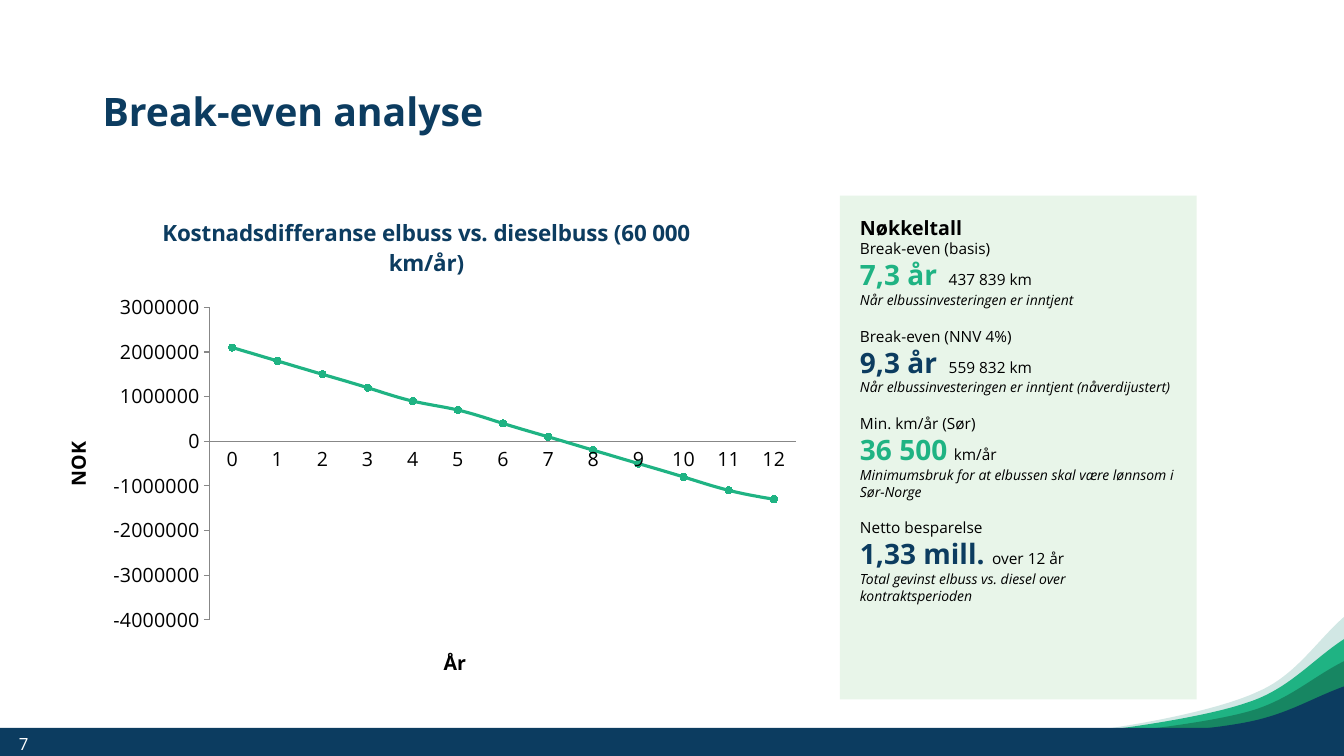
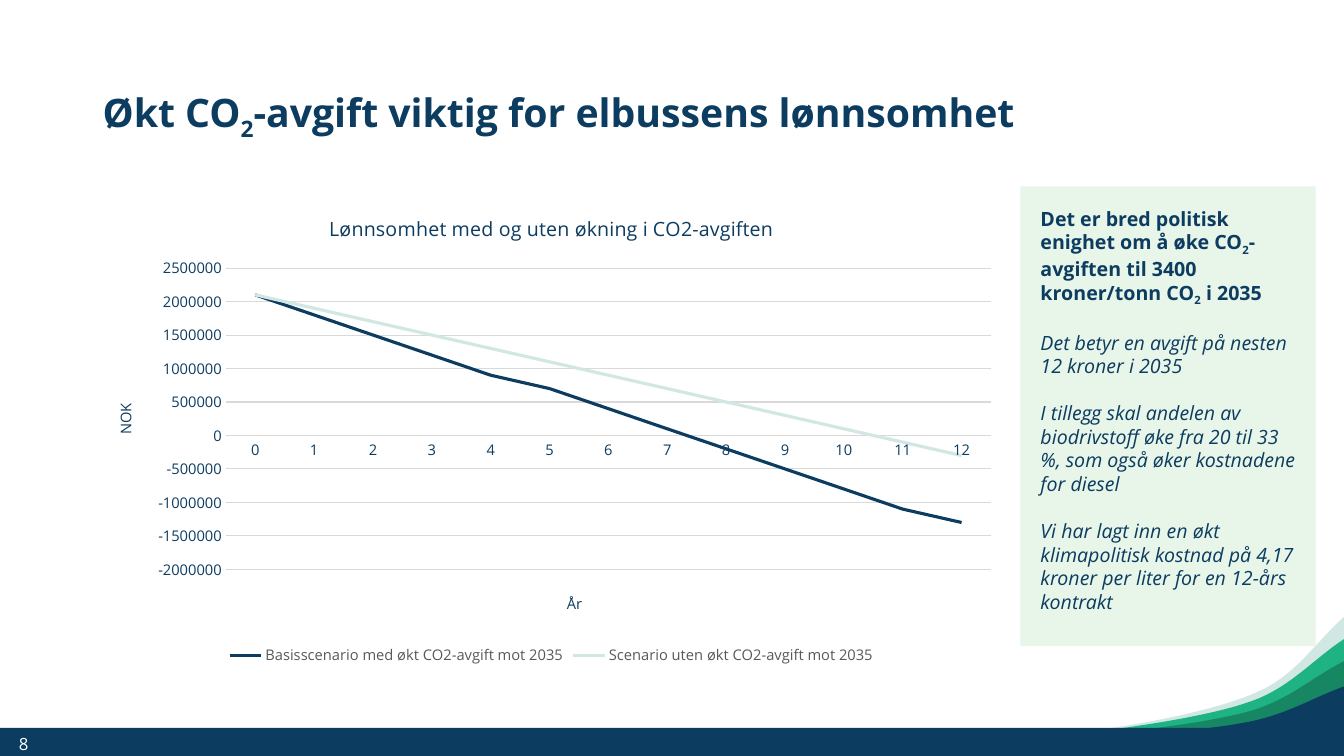
"""Build two slides on the break-even and carbon tax of electric buses."""
import lxml.etree
import pptx
import pptx.chart.data
import pptx.dml.color
import pptx.enum.chart
import pptx.enum.shapes
import pptx.enum.text
import pptx.oxml.ns
import pptx.util

Inches = pptx.util.Inches
Pt = pptx.util.Pt
RGBColor = pptx.dml.color.RGBColor
qn = pptx.oxml.ns.qn

FACE = "Open Sans"
NAVY = RGBColor(0x0C, 0x3C, 0x60)
GREEN = RGBColor(0x1F, 0xB3, 0x83)
FOREST = RGBColor(0x17, 0x86, 0x62)
PALE = RGBColor(0xD1, 0xE7, 0xE4)
MINT = RGBColor(0xE8, 0xF5, 0xE9)
WHITE = RGBColor(0xFF, 0xFF, 0xFF)
BLACK = RGBColor(0x00, 0x00, 0x00)
SILVER = RGBColor(0xD9, 0xD9, 0xD9)
GRAY = RGBColor(0x87, 0x87, 0x87)
SLATE = RGBColor(0x59, 0x59, 0x59)

WIDTH, HEIGHT = 13.33, 7.5
WAVES = [
    (PALE, (9.16, 7.4), [
        [(8.63, 7.37), (9.64, 7.41), (10.19, 7.31)],
        [(10.75, 7.29), (11.97, 7.1), (12.48, 6.86)],
        [(12.85, 6.7), (13.05, 6.37), (13.33, 6.12)]]),
    (GREEN, (8.61, 7.42), [
        [(8.02, 7.4), (9.16, 7.43), (9.78, 7.35)],
        [(10.42, 7.33), (11.79, 7.17), (12.37, 6.97)],
        [(12.78, 6.84), (13.01, 6.55), (13.33, 6.34)]]),
    (FOREST, (8.62, 7.42), [
        [(8.03, 7.4), (9.17, 7.42), (9.79, 7.36)],
        [(10.42, 7.35), (11.8, 7.22), (12.38, 7.06)],
        [(12.78, 6.95), (13.01, 6.72), (13.33, 6.56)]]),
    (NAVY, (8.46, 7.43), [
        [(7.85, 7.41), (9.03, 7.43), (9.67, 7.38)],
        [(10.32, 7.37), (11.75, 7.28), (12.34, 7.17)],
        [(12.77, 7.09), (13, 6.93), (13.33, 6.81)]]),
]
BASE = [2100000, 1800000, 1500000, 1200000, 900000, 700000, 400000,
        100000, -200000, -500000, -800000, -1100000, -1300000]
NO_RISE = [2100000 - 200000 * year for year in range(13)]
FACTS = [
    ("Break-even (basis)", "7,3 år", "437 839 km", 0.88, GREEN,
     "Når elbussinvesteringen er inntjent"),
    ("Break-even (NNV 4%)", "9,3 år", "559 832 km", 0.88, NAVY,
     "Når elbussinvesteringen er inntjent (nåverdijustert)"),
    ("Min. km/år (Sør)", "36 500", "km/år", 0.93, GREEN,
     "Minimumsbruk for at elbussen skal være lønnsom i Sør-Norge"),
    ("Netto besparelse", "1,33 mill.", "over 12 år", 1.31, NAVY,
     "Total gevinst elbuss vs. diesel over kontraktsperioden"),
]
NOTES = [
    "Det betyr en avgift på nesten 12 kroner i 2035",
    "I tillegg skal andelen av biodrivstoff øke fra 20 til 33 %, "
    "som også øker kostnadene for diesel",
    "Vi har lagt inn en økt klimapolitisk kostnad på 4,17 kroner "
    "per liter for en 12-års kontrakt",
]


class Deck:
    """Hold the shared style and the current slide."""

    def __init__(self):
        """Start an empty deck."""
        self.show = pptx.Presentation()
        self.show.slide_width = Inches(WIDTH)
        self.show.slide_height = Inches(HEIGHT)
        self.slide = None

    def page(self, title, number):
        """Add a slide with waves, band, title and number."""
        self.slide = self.show.slides.add_slide(self.show.slide_layouts[6])
        for color, start, parts in WAVES:
            self.wave(color, start, parts)
        self.block((0, 7.22, WIDTH, 0.28), NAVY)
        head = self.line(self.label((0.92, 0.4, 11.5, 1.45)), title, 28, NAVY, bold=True)
        head.line_spacing = 0.9
        self.line(self.label((0.09, 7.18, 0.57, 0.4)), str(number), 12, WHITE)

    def paint(self, shape, color):
        """Fill a shape with no line or shadow."""
        shape.shadow.inherit = False
        shape.fill.solid()
        shape.fill.fore_color.rgb = color
        shape.line.fill.background()

    def wave(self, color, start, parts):
        """Draw a wave of cubic curves down to its flat base."""
        knots = [start] + [part[-1] for part in parts] + [(WIDTH, start[1])]
        points = [(Inches(x), Inches(y)) for x, y in knots]
        form = self.slide.shapes.build_freeform(*points[0], scale=1.0)
        form.add_line_segments(points[1:], close=True)
        shape = form.convert_to_shape()
        self.paint(shape, color)
        for edge, part in zip(list(shape._element.iter(qn("a:lnTo"))), parts):
            bend = lxml.etree.Element(qn("a:cubicBezTo"))
            for x, y in part:
                lxml.etree.SubElement(
                    bend, qn("a:pt"), x=str(Inches(x) - shape.left),
                    y=str(Inches(y) - shape.top))
            edge.getparent().replace(edge, bend)

    def block(self, box, color):
        """Draw a filled rectangle."""
        shape = self.slide.shapes.add_shape(
            pptx.enum.shapes.MSO_SHAPE.RECTANGLE, *map(Inches, box))
        self.paint(shape, color)
        return shape

    def panel(self, box):
        """Draw a mint panel and return its text frame."""
        frame = self.block(box, MINT).text_frame
        frame.word_wrap = True
        frame.vertical_anchor = pptx.enum.text.MSO_ANCHOR.TOP
        frame.margin_left = frame.margin_right = Inches(0.2)
        frame.margin_top = frame.margin_bottom = Inches(0.2)
        return frame

    def label(self, box):
        """Add a text box and return its frame."""
        frame = self.slide.shapes.add_textbox(*map(Inches, box)).text_frame
        frame.word_wrap = True
        frame.vertical_anchor = pptx.enum.text.MSO_ANCHOR.MIDDLE
        return frame

    def style(self, font, size, color, bold=False, slant=False):
        """Set the face, size, colour and weight of a font."""
        font.name = FACE
        font.size = Pt(size)
        font.color.rgb = color
        font.bold = bold
        font.italic = slant

    def line(self, frame, text, size, color, bold=False, slant=False, gap=0, tab=None):
        """Add a paragraph, lowering each subscript two."""
        para = frame.paragraphs[0]
        if para.runs:
            para = frame.add_paragraph()
        para.alignment = pptx.enum.text.PP_ALIGN.LEFT
        if gap:
            para.space_before = Pt(gap)
        if tab:
            stops = lxml.etree.SubElement(para._p.get_or_add_pPr(), qn("a:tabLst"))
            lxml.etree.SubElement(
                stops, qn("a:tab"), pos=str(Inches(tab)), algn="l")
        self.style(para.font, size, color, bold, slant)
        for index, part in enumerate(text.split("₂")):
            if index:
                low = para.add_run()
                low.text = "2"
                low._r.get_or_add_rPr().set("baseline", "-25000")
            if part:
                para.add_run().text = part
        return para

    def fact(self, frame, name, value, unit, tab, color, note, gap):
        """Add a key figure with its name, unit and note."""
        self.line(frame, name, 11, BLACK, gap=gap)
        para = self.line(frame, value, 11, BLACK, tab=tab)
        self.style(para.runs[0].font, 20, color, bold=True)
        para.add_run().text = "\t" + unit
        self.line(frame, note, 10, BLACK, slant=True)

    def place(self, chart, box, plot):
        """Fix the plot area of a chart, both boxes in inches."""
        area = chart._chartSpace.chart.plotArea
        layout = area.find(qn("c:layout"))
        if layout is None:
            layout = lxml.etree.Element(qn("c:layout"))
            area.insert(0, layout)
        left, top, wide, high = box
        x, y, w, h = plot
        manual = lxml.etree.SubElement(layout, qn("c:manualLayout"))
        for key, value in (
                ("layoutTarget", "inner"), ("xMode", "edge"), ("yMode", "edge"),
                ("x", (x - left) / wide), ("y", (y - top) / high),
                ("w", w / wide), ("h", h / high)):
            lxml.etree.SubElement(manual, qn("c:" + key), val=str(value))

    def chart(self, kind, box, plot, series, size, color, title, big, bold, scale):
        """Add a line chart over twelve years."""
        data = pptx.chart.data.CategoryChartData()
        data.categories = [str(year) for year in range(13)]
        for name, values, _ in series:
            data.add_series(name, values)
        chart = self.slide.shapes.add_chart(kind, *map(Inches, box), data).chart
        self.style(chart.font, size, color)
        chart.has_legend = False
        chart.has_title = True
        self.head(chart.chart_title, title, big, NAVY, bold)
        chart.plots[0].vary_by_categories = False
        for item, (_, _, tint) in zip(chart.plots[0].series, series):
            item.smooth = False
            item.format.line.color.rgb = tint
            item.format.line.width = Pt(2.25)
        for axis, name in ((chart.category_axis, "År"), (chart.value_axis, "NOK")):
            self.head(axis.axis_title, name, size, color, bold)
            self.style(axis.tick_labels.font, size, color)
            axis.has_major_gridlines = False
            axis.major_tick_mark = pptx.enum.chart.XL_TICK_MARK.NONE
        axis.axis_title.text_frame._txBody.bodyPr.set("rot", "-5400000")
        axis.minimum_scale, axis.maximum_scale, axis.major_unit = scale
        axis.tick_labels.number_format = "General"
        axis.tick_labels.number_format_is_linked = False
        self.place(chart, box, plot)
        return chart

    def head(self, title, text, size, color, bold):
        """Write a chart or axis title."""
        title.text_frame.text = text
        self.style(title.text_frame.paragraphs[0].font, size, color, bold)


def main():
    """Build and save both slides."""
    deck = Deck()
    kinds = pptx.enum.chart.XL_CHART_TYPE

    deck.page("Break-even analyse", 7)
    chart = deck.chart(
        kinds.LINE_MARKERS, (0.41, 1.95, 7.64, 5), (2.08, 3.05, 5.82, 3.1),
        [("Series 1", BASE, GREEN)], 14, BLACK,
        "Kostnadsdifferanse elbuss vs. dieselbuss (60 000 km/år)", 16, True,
        (-4000000, 3000000, 1000000))
    trend = chart.plots[0].series[0]
    trend.smooth = True
    trend.marker.style = pptx.enum.chart.XL_MARKER_STYLE.CIRCLE
    trend.marker.size = 5
    trend.marker.format.fill.solid()
    trend.marker.format.fill.fore_color.rgb = GREEN
    trend.marker.format.line.color.rgb = GREEN
    chart.value_axis.major_tick_mark = pptx.enum.chart.XL_TICK_MARK.OUTSIDE
    for axis in (chart.category_axis, chart.value_axis):
        axis.format.line.color.rgb = GRAY
    frame = deck.panel((8.33, 1.94, 3.54, 5))
    deck.line(frame, "Nøkkeltall", 14, BLACK, bold=True)
    for index, fact in enumerate(FACTS):
        deck.fact(frame, *fact, gap=13.2 if index else 0)

    deck.page("Økt CO₂-avgift viktig for elbussens lønnsomhet", 8)
    chart = deck.chart(
        kinds.LINE, (0.93, 1.93, 9.08, 4.71), (2.24, 2.66, 7.59, 2.99),
        [("Basisscenario med økt CO2-avgift mot 2035", BASE, NAVY),
         ("Scenario uten økt CO2-avgift mot 2035", NO_RISE, PALE)], 10.5, NAVY,
        "Lønnsomhet med og uten økning i CO2-avgiften", 14, False,
        (-2000000, 2500000, 500000))
    chart.has_legend = True
    chart.legend.position = pptx.enum.chart.XL_LEGEND_POSITION.BOTTOM
    chart.legend.include_in_layout = False
    deck.style(chart.legend.font, 10.5, SLATE)
    chart.value_axis.has_major_gridlines = True
    chart.value_axis.format.line.fill.background()
    for part in (chart.category_axis, chart.value_axis.major_gridlines):
        part.format.line.color.rgb = SILVER
        part.format.line.width = Pt(0.75)
    frame = deck.panel((10.12, 1.85, 2.93, 4.56))
    deck.line(frame, "Det er bred politisk enighet om å øke CO₂-avgiften til 3400 "
              "kroner/tonn CO₂ i 2035", 14, NAVY, bold=True)
    for note in NOTES:
        deck.line(frame, note, 14, NAVY, slant=True, gap=16.8)

    deck.show.save("out.pptx")


if __name__ == "__main__":
    main()
